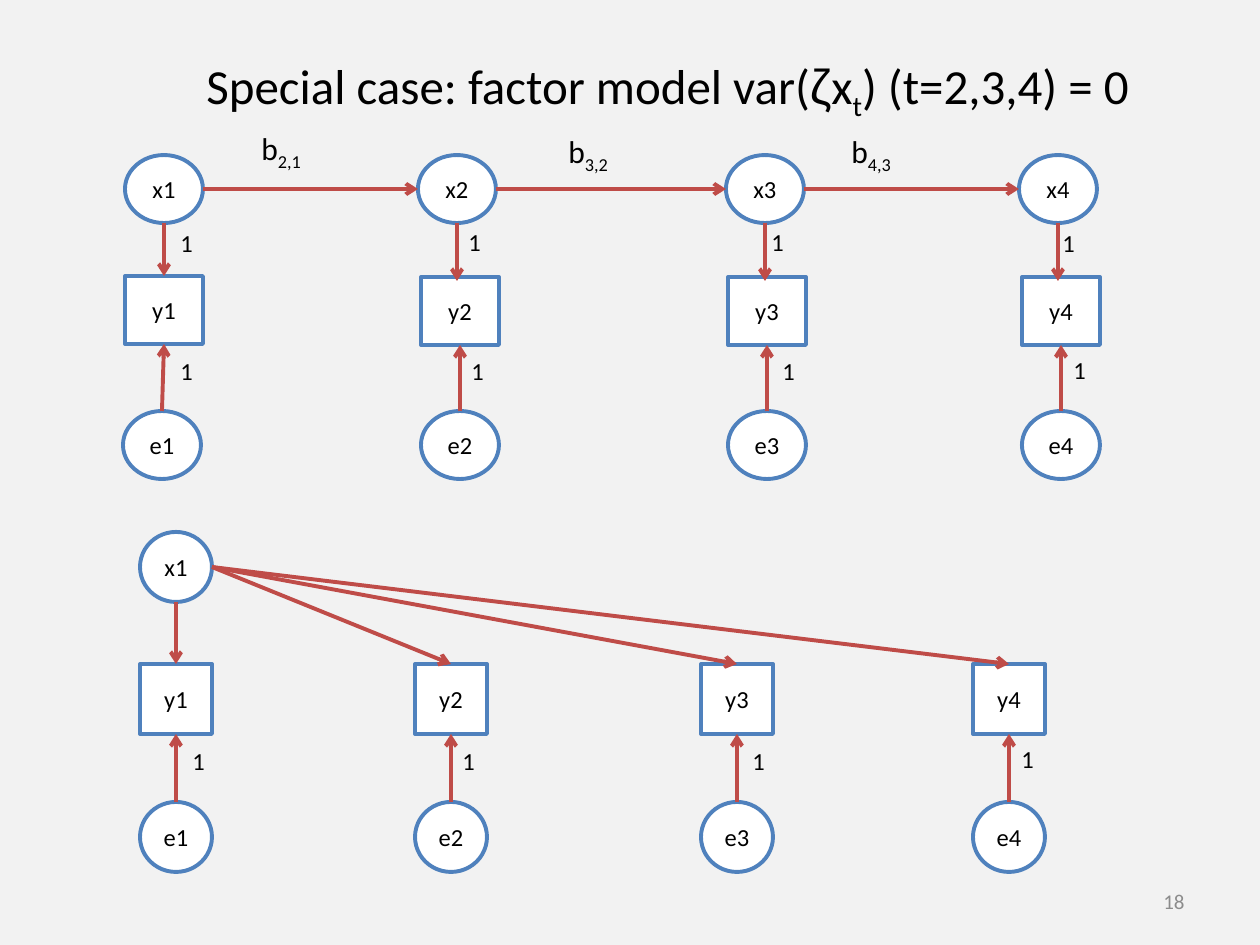
import pptx
import pptx.util
import pptx.dml.color
import pptx.enum.shapes
import pptx.enum.text
import pptx.oxml

PX = 914400 / 126  # EMU in one px
color = pptx.dml.color.RGBColor.from_string
ALIGN = pptx.enum.text.PP_ALIGN
ANCHOR = pptx.enum.text.MSO_ANCHOR
OVAL = pptx.enum.shapes.MSO_SHAPE.OVAL
BOX = pptx.enum.shapes.MSO_SHAPE.RECTANGLE
TOP, BOTTOM = 0, 2  # connection sites of a rectangle

deck = pptx.Presentation()
deck.slide_width, deck.slide_height = round(1260 * PX), round(945 * PX)
slide = deck.slides.add_slide(deck.slide_layouts[6])
slide.background.fill.solid()
slide.background.fill.fore_color.rgb = color("F2F2F2")


def write(frame, runs, size, ink="000000", align=ALIGN.LEFT, **frame_format):
    """Fill a text frame with (text, font, baseline in percent) runs."""
    for key, value in {"word_wrap": False, **frame_format}.items():
        setattr(frame, key, value)
    paragraph = frame.paragraphs[0]
    paragraph.alignment = align
    for words, font, baseline in runs:
        run = paragraph.add_run()
        run.text = words
        for key, value in {"name": font, "size": pptx.util.Pt(size)}.items():
            setattr(run.font, key, value)
        run.font.color.rgb = color(ink)
        if baseline:
            run._r.get_or_add_rPr().set("baseline", str(baseline * 1000))


def arrow(start, end, target=None, site=TOP):
    """Draw an arrow between two EMU points, joined to a target box if given."""
    link = slide.shapes.add_connector(
        pptx.enum.shapes.MSO_CONNECTOR.STRAIGHT, *map(round, (*start, *end)))
    link.line.color.rgb = color("BF4C48")
    link.line.width = pptx.util.Pt(2.25)
    ns = 'xmlns:a="http://schemas.openxmlformats.org/drawingml/2006/main"'
    link.line._get_or_add_ln().append(
        pptx.oxml.parse_xml(f'<a:tailEnd {ns} type="arrow"/>'))
    link._element.spPr.append(pptx.oxml.parse_xml(f"<a:effectLst {ns}/>"))
    if target is not None:
        link.end_connect(target, site)


# Variables of both models: model, letter, outline, size, lefts, tops
node_rows = [
    ("full", "y", BOX, (78, 68), (125, 421, 728, 1022), (276, 277, 277, 277)),
    ("full", "x", OVAL, (78, 68), (125, 418, 726, 1019), (155,) * 4),
    ("full", "e", OVAL, (78, 68), (123, 421, 728, 1022), (411,) * 4),
    ("factor", "y", BOX, (72, 70), (140, 415, 701, 973), (664,) * 4),
    ("factor", "x", OVAL, (72, 70), (140,), (532,)),
    ("factor", "e", OVAL, (72, 70), (140, 415, 701, 973), (802,) * 4),
]
nodes = {}
for model, letter, outline, size, lefts, tops in node_rows:
    for number, corner in enumerate(zip(lefts, tops), 1):
        node = slide.shapes.add_shape(
            outline, *(round(v * PX) for v in (*corner, *size)))
        node.shadow.inherit = False
        node.fill.solid()
        node.fill.fore_color.rgb = color("FFFFFF")
        node.line.color.rgb = color("4F81BD")
        node.line.width = pptx.util.Pt(2.25)
        write(node.text_frame, [(f"{letter}{number}", "Calibri", 0)], 14,
              align=ALIGN.CENTER, vertical_anchor=ANCHOR.MIDDLE,
              margin_left=0, margin_right=0)
        nodes[model, letter, number] = node

# Errors point up to their indicators
for model in ("full", "factor"):
    for number in range(1, 5):
        error, indicator = nodes[model, "e", number], nodes[model, "y", number]
        middle = error.left + error.width / 2
        arrow((middle, error.top), (middle, indicator.top + indicator.height),
              indicator, BOTTOM)

# Full model: each state points to its indicator and to the next state
for number in range(1, 5):
    state = nodes["full", "x", number]
    middle = state.left + state.width / 2
    indicator = nodes["full", "y", 1] if number == 1 else None
    arrow((middle, state.top + state.height), (middle, 281 * PX), indicator)
    if number < 4:
        level = state.top + state.height / 2
        arrow((state.left + state.width, level),
              (nodes["full", "x", number + 1].left, level))

# Factor model: the one factor points to every indicator
factor = nodes["factor", "x", 1]
factor_bottom = (factor.left + factor.width / 2, factor.top + factor.height)
factor_right = (factor.left + factor.width, factor.top + factor.height / 2)
for number in range(1, 5):
    indicator = nodes["factor", "y", number]
    arrow(factor_bottom if number == 1 else factor_right,
          (indicator.left + indicator.width / 2, indicator.top), indicator)

# Texts: left, top, width, height, font size, runs
one = [("1", "Calibri", 0)]
labels = [(left, top, 42, 46, 14, one) for lefts, tops in [
    ((168, 456, 759, 1050), (222, 221, 221, 222)),
    ((168, 459, 770, 1061), (350, 350, 350, 349)),
    ((180, 450, 740, 1009), (740, 740, 740, 738)),
] for left, top in zip(lefts, tops)]
labels += [
    (left, top, 78, 55, 18, [("b", "Calibri", 0), (path_index, "Calibri", -25)])
    for left, top, path_index in [(249, 123, "2,1"), (556, 126, "3,2"), (839, 126, "4,3")]
]
labels.append((194, 49, 974, 72, 28, [
    ("Special case: factor model var(", "Calibri", 0), ("ζ", "Arial", 0),
    ("x", "Calibri", 0), ("t", "Calibri", -25), (") (t=2,3,4) = 0", "Calibri", 0)]))
for *place, size, runs in labels:
    label = slide.shapes.add_textbox(*(round(v * PX) for v in place))
    write(label.text_frame, runs, size,
          auto_size=pptx.enum.text.MSO_AUTO_SIZE.SHAPE_TO_FIT_TEXT)

# Page number
page = slide.shapes.add_textbox(*(round(v * PX) for v in (903, 876, 294, 50)))
write(page.text_frame, [("18", "Calibri", 0)], 12, "8C8C8C", ALIGN.RIGHT,
      word_wrap=True, vertical_anchor=ANCHOR.MIDDLE)

deck.save("out.pptx")
